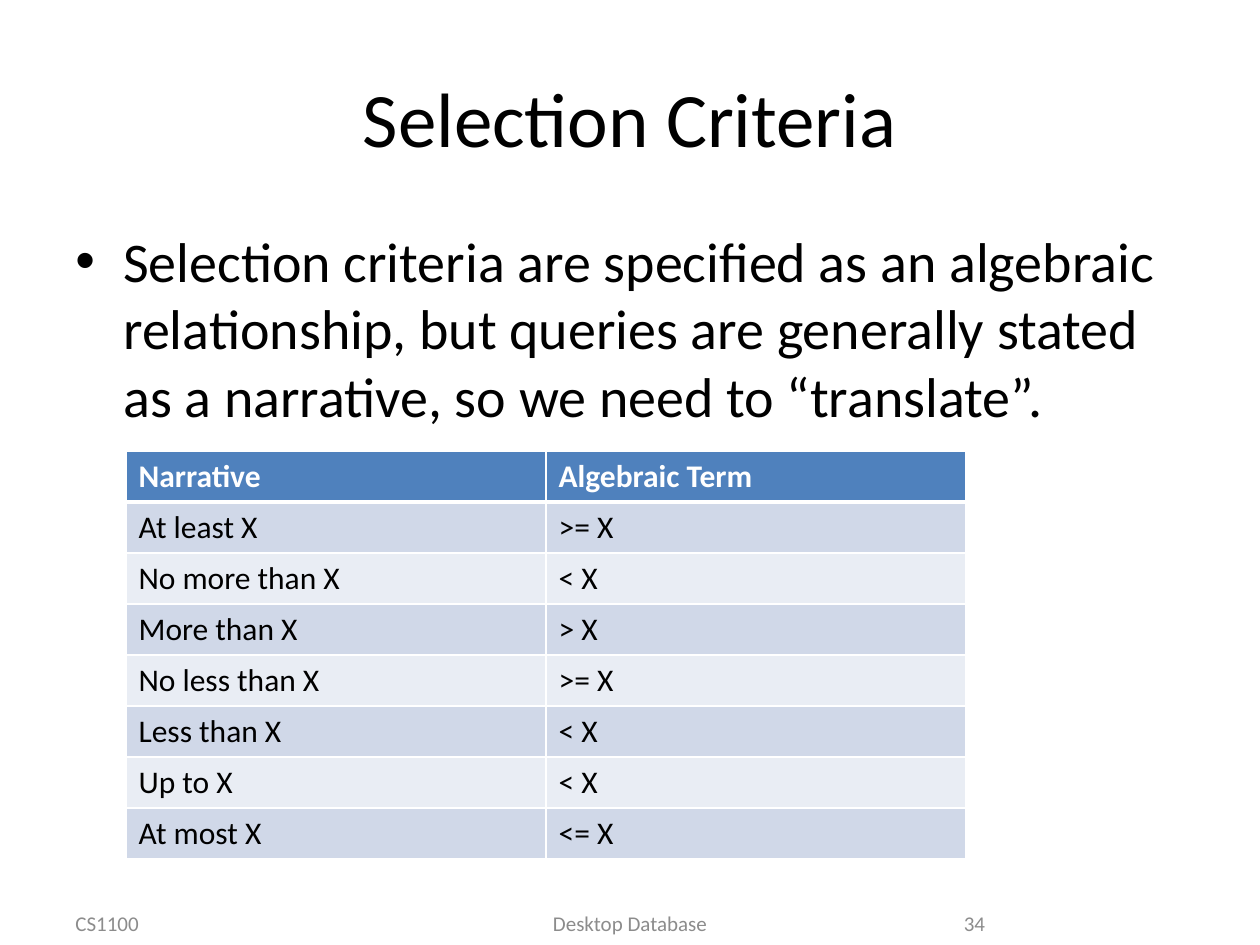
from lxml.etree import SubElement
from pptx import Presentation
from pptx.dml.color import RGBColor
from pptx.enum.text import MSO_ANCHOR, PP_ALIGN
from pptx.oxml.ns import qn
from pptx.util import Inches, Pt

BLACK = RGBColor(0, 0, 0)
WHITE = RGBColor(255, 255, 255)
GRAY = RGBColor(0x8C, 0x8C, 0x8C)
BLUE = RGBColor(0x4F, 0x81, 0xBD)
BANDS = [RGBColor(0xE9, 0xED, 0xF4), RGBColor(0xD0, 0xD8, 0xE8)]

deck = Presentation()
deck.slide_width, deck.slide_height = Inches(10), Inches(7.5)
slide = deck.slides.add_slide(deck.slide_layouts[6])
COL = deck.slide_width / 120
ROW = deck.slide_height / 150


def style(para, size, color, bold=False):
    for run in para.runs:
        run.font.name = "Calibri"
        run.font.size = Pt(size)
        run.font.bold = bold
        run.font.color.rgb = color


def add_text(text, x, y, w, h, size, color, align, anchor=MSO_ANCHOR.MIDDLE):
    box = slide.shapes.add_textbox(int(x * COL), int(y * ROW), int(w * COL), int(h * ROW))
    frame = box.text_frame
    frame.word_wrap = True
    frame.vertical_anchor = anchor
    frame.text = text
    para = frame.paragraphs[0]
    para.alignment = align
    style(para, size, color)
    return para


add_text("Selection Criteria", 6, 6, 108, 25, 44, BLACK, PP_ALIGN.CENTER)
body = add_text(
    "Selection criteria are specified as an algebraic relationship, but queries "
    "are generally stated as a narrative, so we need to “translate”.",
    6, 35, 108, 99, 32, BLACK, PP_ALIGN.LEFT, MSO_ANCHOR.TOP)
props = body._p.get_or_add_pPr()
props.set("marL", str(Inches(0.38)))
props.set("indent", str(-Inches(0.38)))
SubElement(props, qn("a:buFont"), typeface="Arial")
SubElement(props, qn("a:buChar"), char="•")

for text, x, w, align in [
    ("CS1100", 6, 28, PP_ALIGN.LEFT),
    ("Desktop Database", 41, 38, PP_ALIGN.CENTER),
    ("34", 86, 9, PP_ALIGN.RIGHT),
]:
    add_text(text, x, 143.4, w, 6.2, 12, GRAY, align)

terms = [
    ("Narrative", "Algebraic Term"),
    ("At least X", ">= X"),
    ("No more than X", "< X"),
    ("More than X", "> X"),
    ("No less than X", ">= X"),
    ("Less than X", "< X"),
    ("Up to X", "< X"),
    ("At most X", "<= X"),
]
table = slide.shapes.add_table(
    len(terms), 2, int(12 * COL), int(71.6 * ROW), int(80 * COL), int(64.8 * ROW)).table
for r, pair in enumerate(terms):
    head = r == 0
    for c, text in enumerate(pair):
        cell = table.cell(r, c)
        cell.text = text
        style(cell.text_frame.paragraphs[0], 18, WHITE if head else BLACK, head)
        edges = cell._tc.get_or_add_tcPr()
        for side in "LRTB":
            thick = (r, side) in [(0, "B"), (1, "T")]
            line = SubElement(edges, qn("a:ln" + side), w=str(Pt(3 if thick else 1)))
            paint = SubElement(line, qn("a:solidFill"))
            SubElement(paint, qn("a:srgbClr"), val=str(WHITE))
        cell.fill.solid()
        cell.fill.fore_color.rgb = BLUE if head else BANDS[r % 2]

deck.save("out.pptx")
